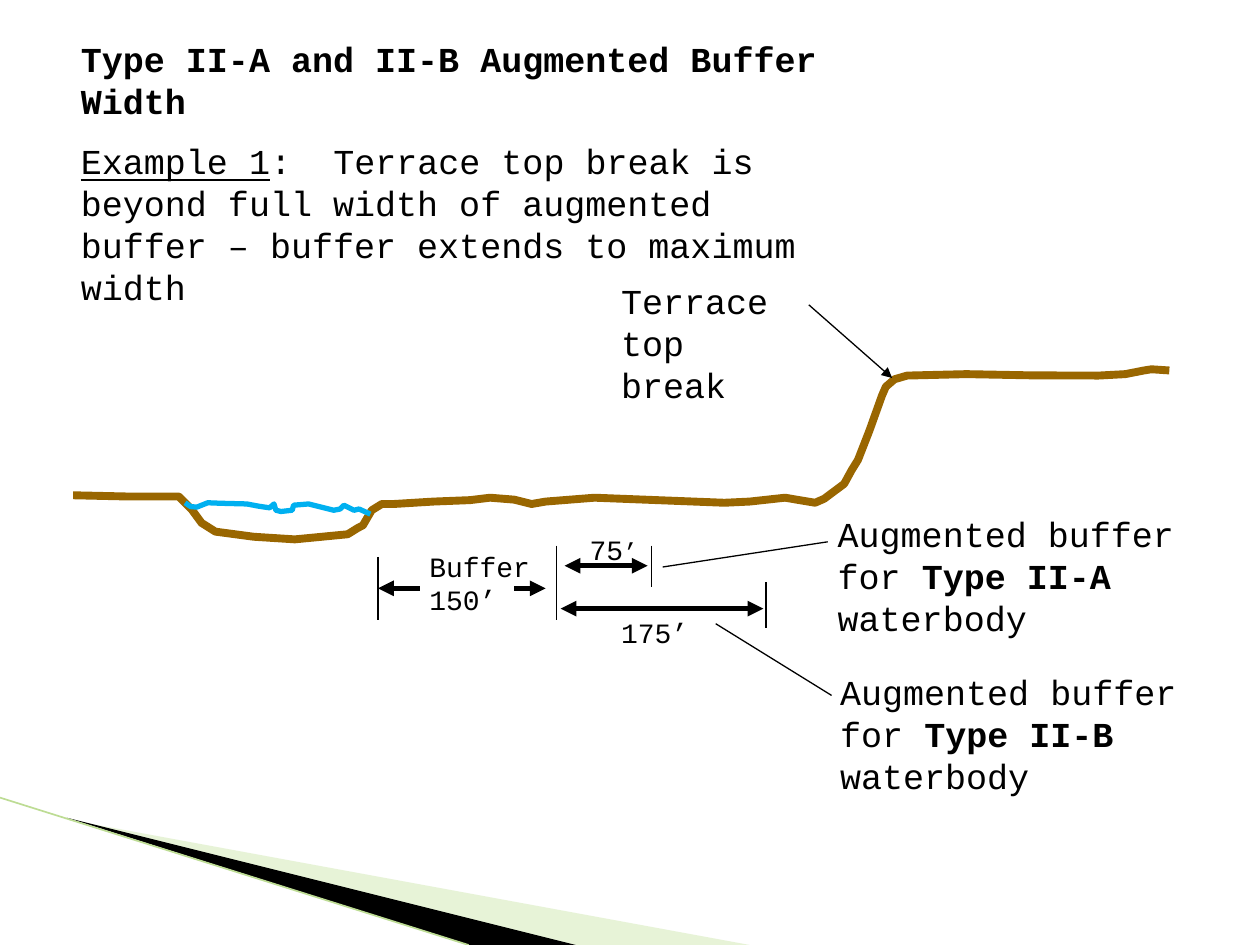
"""Build a slide showing augmented buffer widths beside a terraced stream bank."""
from typing import NamedTuple, Optional

from lxml import etree
from pptx import Presentation
from pptx.dml.color import RGBColor
from pptx.enum.shapes import MSO_CONNECTOR
from pptx.enum.text import MSO_ANCHOR, MSO_AUTO_SIZE, PP_ALIGN
from pptx.oxml.ns import qn
from pptx.util import Pt

STRAIGHT = MSO_CONNECTOR.STRAIGHT
TOP = MSO_ANCHOR.TOP
LEFT = PP_ALIGN.LEFT
FIT_SHAPE = MSO_AUTO_SIZE.SHAPE_TO_FIT_TEXT
BLACK = RGBColor(0x00, 0x00, 0x00)
BROWN = RGBColor(0x99, 0x66, 0x00)
BLUE = RGBColor(0x00, 0xB0, 0xF0)
PALE_GREEN = RGBColor(0xC3, 0xE1, 0x9D)
EDGE_GREEN = RGBColor(0xBD, 0xDC, 0x94)
FONT = "Courier New"
THIN, THICK = 0.75, 3


class Run(NamedTuple):
    text: str
    bold: bool = False
    underline: bool = False
    size: Optional[float] = None


class Label(NamedTuple):
    left: float
    top: float
    width: float
    height: float
    size: float
    runs: list[Run]


class Line(NamedTuple):
    start: tuple[float, float]
    end: tuple[float, float]
    width: float = THIN
    head: bool = False
    tail: bool = False
    color: RGBColor = BLACK


class Outline(NamedTuple):
    points: list[tuple[float, float]]
    color: RGBColor
    width: float = 0
    opacity: int = 100


DECORATION = [
    Outline([(39.6, 468.5), (428.4, 540), (328.3, 540)], PALE_GREEN, opacity=40),
    Outline([(38.2, 467.3), (329, 540), (267.8, 540)], BLACK),
]
GROUND = Outline([
    (41.8, 283), (72, 283.7), (102.2, 283.7), (109.4, 290.9), (115.2, 298.8),
    (117.4, 300.2), (123.1, 303.8), (145, 306.7), (168.5, 308.2), (198.7, 305.3),
    (204.5, 301.7), (207.4, 300.2), (212.4, 291.6), (218.2, 288), (225, 288),
    (247.7, 286.6), (268.6, 285.8), (280.1, 284.4), (293.8, 285.5), (303.8, 288),
    (311.8, 286.6), (339.8, 284.4), (414, 287.3), (428.4, 286.6), (448.6, 284.4),
    (465.8, 287.3), (471, 285), (482.4, 276.5), (486.7, 268.6), (490.3, 262.8),
    (496.8, 246.2), (504, 226.1), (506.2, 221), (511.2, 216.7), (518.4, 214.6),
    (552.2, 213.8), (590, 214.5), (627.8, 214.6), (643, 213.8), (653.8, 211.7),
    (658, 211), (668.2, 211.7),
], BROWN, 4.5)
WATER = Outline([
    (105.8, 287.3), (109, 289.5), (112.5, 289.8), (118.8, 287.3), (126, 287.6),
    (141.1, 288), (148, 289.3), (154.1, 290.2), (156.6, 288), (157.7, 291.6),
    (160.6, 292.3), (167, 291.6), (167.8, 288.7), (176.4, 288), (190.8, 291.6),
    (194.4, 290.9), (196.6, 288.7), (202.3, 291.6), (205.2, 290.9), (211.7, 293.8),
], BLUE, 3)
LINES = [
    Line((462.2, 174.2), (509.8, 216), tail=True),
    Line((318.2, 311.8), (318.2, 354.2)),
    Line((239.8, 336.2), (216, 336.2), THICK, tail=True),
    Line((293.8, 336.2), (311.8, 336.2), THICK, tail=True),
    Line((216, 318.2), (216, 354.2)),
    Line((372.2, 311.8), (372.2, 335.5)),
    Line((322.6, 323.3), (370.1, 323.3), THICK, head=True, tail=True),
    Line((378.7, 324), (473, 309.6)),
    Line((437.8, 358.6), (437.8, 332.6)),
    Line((436.3, 347.8), (320.4, 347.8), THICK, head=True, tail=True),
    Line((409, 356.4), (475.2, 397.4)),
]
HEADING = [
    [Run("Type II-A and II-B Augmented Buffer Width", bold=True)],
    [Run("Example 1", underline=True),
     Run(":  Terrace top break is beyond full width of augmented buffer – "
         "buffer extends to maximum width")],
]


def buffer_runs(kind: str) -> list[Run]:
    """Return the runs naming the augmented buffer of one waterbody type."""
    return [Run("Augmented buffer for "), Run(f"{kind} ", bold=True), Run("waterbody")]


LABELS = [
    Label(347.8, 156.2, 120.2, 55.4, 20, [Run("Terrace top break")]),
    Label(238.3, 310.3, 84.2, 46.1, 16, [Run("Buffer 150’")]),
    Label(471.6, 289.4, 216, 79.9, 20, buffer_runs("Type II-A")),
    Label(473, 379.4, 211, 79.9, 20, buffer_runs("Type II-B")),
    Label(329.8, 301, 43, 26.6, 16, [Run("75"), Run("’", size=14)]),
    Label(347.8, 348.5, 54, 26.6, 16, [Run("175’")]),
]


def fill_paragraph(paragraph, runs: list[Run], size: float) -> None:
    """Write the runs and format the paragraph."""
    paragraph.alignment = LEFT
    paragraph.font.name = FONT
    paragraph.font.size = Pt(size)
    paragraph.font.color.rgb = BLACK
    for item in runs:
        run = paragraph.add_run()
        run.text = item.text
        run.font.bold = item.bold
        run.font.underline = item.underline
        if item.size:
            run.font.size = Pt(item.size)


def draw_outline(slide, outline: Outline) -> None:
    """Draw a filled polygon, or an open stroke when a width is given."""
    points = [(Pt(x), Pt(y)) for x, y in outline.points]
    builder = slide.shapes.build_freeform(*points[0])
    builder.add_line_segments(points[1:], close=not outline.width)
    shape = builder.convert_to_shape()
    shape.shadow.inherit = False
    if outline.width:
        shape.fill.background()
        shape.line.color.rgb = outline.color
        shape.line.width = Pt(outline.width)
        return
    shape.line.fill.background()
    shape.fill.solid()
    shape.fill.fore_color.rgb = outline.color
    if outline.opacity < 100:
        color = shape.element.spPr.find(qn("a:solidFill"))[0]
        etree.SubElement(color, qn("a:alpha"), val=str(outline.opacity * 1000))


def draw_line(slide, line: Line) -> None:
    """Draw a straight line with optional arrowheads."""
    ends = [Pt(value) for value in (*line.start, *line.end)]
    connector = slide.shapes.add_connector(STRAIGHT, *ends)
    connector.line.color.rgb = line.color
    connector.line.width = Pt(line.width)
    properties = connector.element.spPr
    stroke = properties.find(qn("a:ln"))
    for tag, wanted in (("a:headEnd", line.head), ("a:tailEnd", line.tail)):
        if wanted:
            etree.SubElement(stroke, qn(tag), type="triangle")
    etree.SubElement(properties, qn("a:effectLst"))


def draw_label(slide, label: Label) -> None:
    """Draw a wrapped text label."""
    box = slide.shapes.add_textbox(*(Pt(value) for value in label[:4]))
    frame = box.text_frame
    frame.word_wrap = True
    frame.auto_size = FIT_SHAPE
    fill_paragraph(frame.paragraphs[0], label.runs, label.size)


def write_heading(slide) -> None:
    """Place the heading and its example in the title placeholder."""
    title = slide.shapes.title
    title.left, title.top, title.width, title.height = Pt(39), Pt(18), Pt(436.3), Pt(164)
    frame = title.text_frame
    frame.word_wrap = True
    frame.auto_size = FIT_SHAPE
    frame.vertical_anchor = TOP
    fill_paragraph(frame.paragraphs[0], HEADING[0], 20)
    example = frame.add_paragraph()
    example.space_before = Pt(10)
    fill_paragraph(example, HEADING[1], 20)


def main() -> None:
    """Assemble and save the slide."""
    presentation = Presentation()
    presentation.slide_width, presentation.slide_height = Pt(720), Pt(540)
    slide = presentation.slides.add_slide(presentation.slide_layouts[5])
    for outline in DECORATION:
        draw_outline(slide, outline)
    draw_line(slide, Line((0, 455.8), (267.8, 540), 0.95, color=EDGE_GREEN))
    write_heading(slide)
    for outline in (GROUND, WATER):
        draw_outline(slide, outline)
    for line in LINES:
        draw_line(slide, line)
    for label in LABELS:
        draw_label(slide, label)
    presentation.save("out.pptx")


if __name__ == "__main__":
    main()
